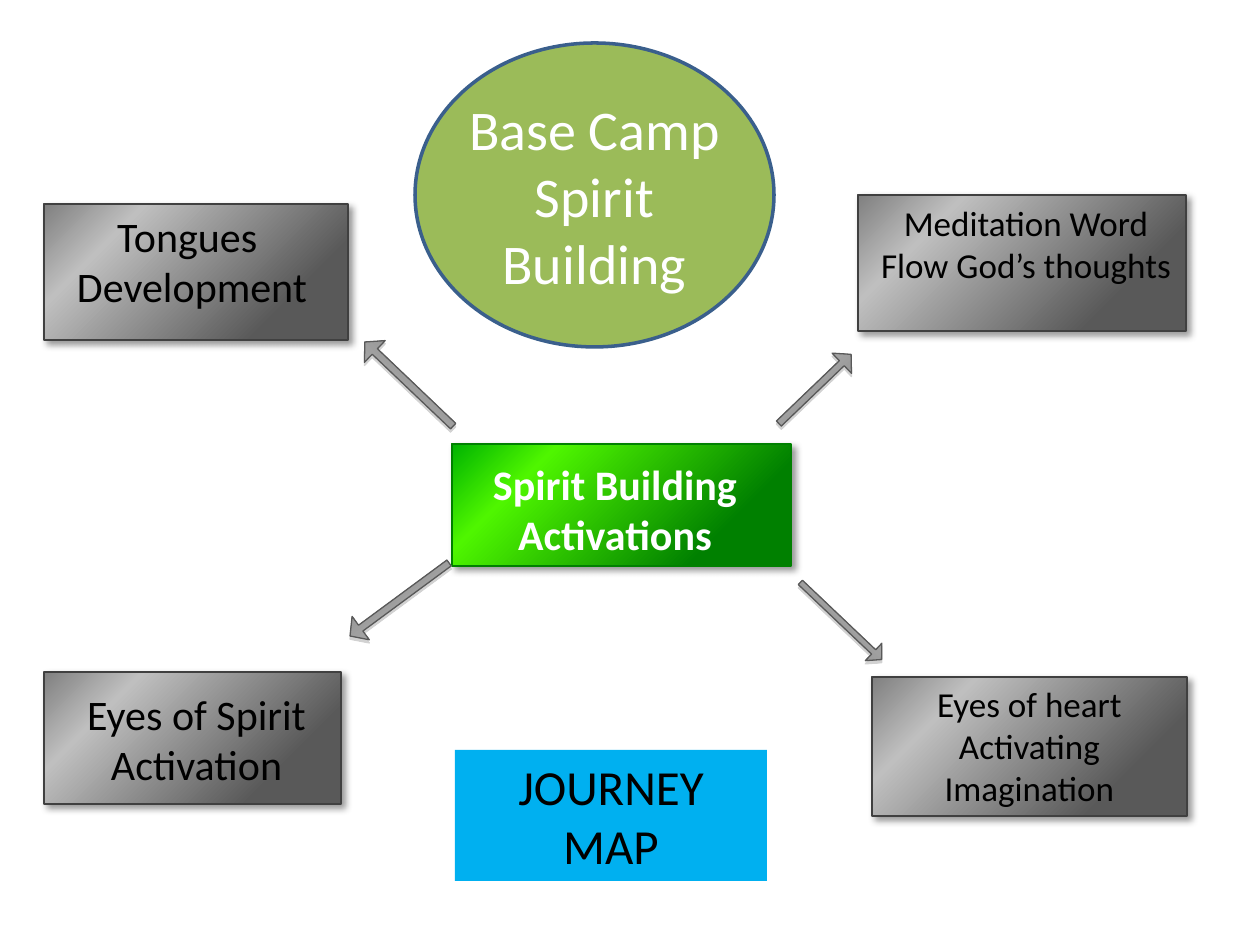
from lxml.etree import SubElement
from pptx import Presentation
from pptx.dml.color import RGBColor
from pptx.enum.shapes import MSO_SHAPE as Preset
from pptx.enum.text import MSO_ANCHOR as Anchor, PP_ALIGN as Align
from pptx.oxml.ns import qn
from pptx.util import Pt

EMU_PER_PX = 914400 / 126
COLORS = {
    "white": "FFFFFF", "black": "000000",
    "camp": "9BBB59", "camp_line": "3A5F8C", "map": "00B0F0",
    "hub_line": "008000", "topic_line": "404040",
    "arrow_line": "595959", "arrow_shadow": "808080",
}
# Gradient stops as (percent, colour)
HUB_STOPS = [(22, "008000"), (77, "4FF600"), (100, "00B300")]
TOPIC_STOPS = [(22, "595959"), (77, "BFBFBF"), (100, "808080")]
ARROW_STOPS = [(0, "BFBFBF"), (100, "7F7F7F")]

# Topic box, text box, wording, size, anchor
TOPICS = [
    ((44, 204, 304, 136), (50, 210, 284, 106),
     "Tongues \nDevelopment", 24, Anchor.TOP),
    ((858, 195, 328, 136), (866, 202, 320, 84),
     "Meditation Word\nFlow God’s thoughts", 20, Anchor.TOP),
    ((44, 672, 297, 132), (48, 697, 297, 83),
     "Eyes of Spirit Activation", 24, Anchor.MIDDLE),
    ((872, 677, 315, 139), (872, 683, 315, 127),
     "Eyes of heart Activating Imagination", 20, Anchor.TOP),
]
# Unrotated arrow box and its rotation
ARROWS = [
    ((765, 375, 100, 28), 316.2),
    ((348, 369, 122, 30), 223.6),
    ((785, 609, 112, 24), 43.5),
    ((338, 585, 123, 29), 143.6),
]


def px(length):
    return round(length * EMU_PER_PX)


def rgb(name):
    return RGBColor.from_string(COLORS[name])


def add_color(parent, color, alpha=None):
    node = SubElement(parent, qn("a:srgbClr"), val=color)
    if alpha is not None:
        SubElement(node, qn("a:alpha"), val=str(alpha * 1000))


def set_gradient(shape, stops, angle):
    shape.fill.gradient()
    gradient = shape._element.spPr.find(qn("a:gradFill"))
    for child in list(gradient):
        gradient.remove(child)
    stop_list = SubElement(gradient, qn("a:gsLst"))
    for percent, color in stops:
        add_color(SubElement(stop_list, qn("a:gs"), pos=str(percent * 1000)), color)
    SubElement(gradient, qn("a:lin"), ang=str(angle * 60000), scaled="0")


def set_shadow(shape, color, alpha, blur, distance, angle):
    effects = shape._element.spPr.find(qn("a:effectLst"))
    shadow = SubElement(effects, qn("a:outerShdw"), blurRad=str(Pt(blur)),
                        dist=str(Pt(distance)), dir=str(angle * 60000),
                        algn="ctr", rotWithShape="0")
    add_color(shadow, COLORS[color], alpha)


def add_block(slide, preset, box, fill=None, line=None, weight=1):
    block = slide.shapes.add_shape(preset, *map(px, box))
    block.shadow.inherit = False
    if fill:
        block.fill.solid()
        block.fill.fore_color.rgb = rgb(fill)
    if line:
        block.line.color.rgb = rgb(line)
        block.line.width = Pt(weight)
    else:
        block.line.fill.background()
    return block


def add_panel(slide, box, stops, line):
    panel = add_block(slide, Preset.RECTANGLE, box, line=line)
    set_gradient(panel, stops, 225)
    set_shadow(panel, "black", 40, 4, 3, 45)


def add_arrow(slide, box, rotation):
    arrow = add_block(slide, Preset.RIGHT_ARROW, box, line="arrow_line", weight=0.75)
    arrow.adjustments[0] = 0.25
    arrow.adjustments[1] = 0.458
    arrow.rotation = rotation
    set_gradient(arrow, ARROW_STOPS, 90)
    set_shadow(arrow, "arrow_shadow", 35, 0, 1.8, 90)


def write_text(holder, *paragraphs, size, color="black", bold=False,
               anchor=Anchor.TOP, inset=True):
    frame = holder.text_frame
    frame.word_wrap = True
    frame.vertical_anchor = anchor
    if not inset:
        frame.margin_left = frame.margin_right = 0
        frame.margin_top = frame.margin_bottom = 0
    for index, wording in enumerate(paragraphs):
        paragraph = frame.add_paragraph() if index else frame.paragraphs[0]
        paragraph.text = wording
        paragraph.alignment = Align.CENTER
        for run in paragraph.runs:
            run.font.name = "Calibri"
            run.font.size = Pt(size)
            run.font.bold = bold
            run.font.color.rgb = rgb(color)


def main():
    deck = Presentation()
    deck.slide_width, deck.slide_height = px(1260), px(945)
    slide = deck.slides.add_slide(deck.slide_layouts[6])

    # Central hub
    add_panel(slide, (452, 444, 339, 122), HUB_STOPS, "hub_line")
    hub_label = slide.shapes.add_textbox(*map(px, (480, 452, 270, 115)))
    write_text(hub_label, "Spirit Building", "Activations",
               size=24, color="white", bold=True)

    # Arrows out to the topics
    for box, rotation in ARROWS:
        add_arrow(slide, box, rotation)

    # Four topics
    for box, label_box, wording, size, anchor in TOPICS:
        add_panel(slide, box, TOPIC_STOPS, "topic_line")
        label = slide.shapes.add_textbox(*map(px, label_box))
        write_text(label, wording, size=size, anchor=anchor, inset=False)

    # Base camp and journey map
    camp = add_block(slide, Preset.OVAL, (415, 43, 359, 304), "camp", "camp_line", 2)
    write_text(camp, "Base Camp", "Spirit Building", size=32, color="white",
               anchor=Anchor.MIDDLE, inset=False)
    journey = add_block(slide, Preset.RECTANGLE, (455, 750, 312, 131), "map")
    write_text(journey, "JOURNEY MAP", size=28)

    deck.save("out.pptx")


if __name__ == "__main__":
    main()
